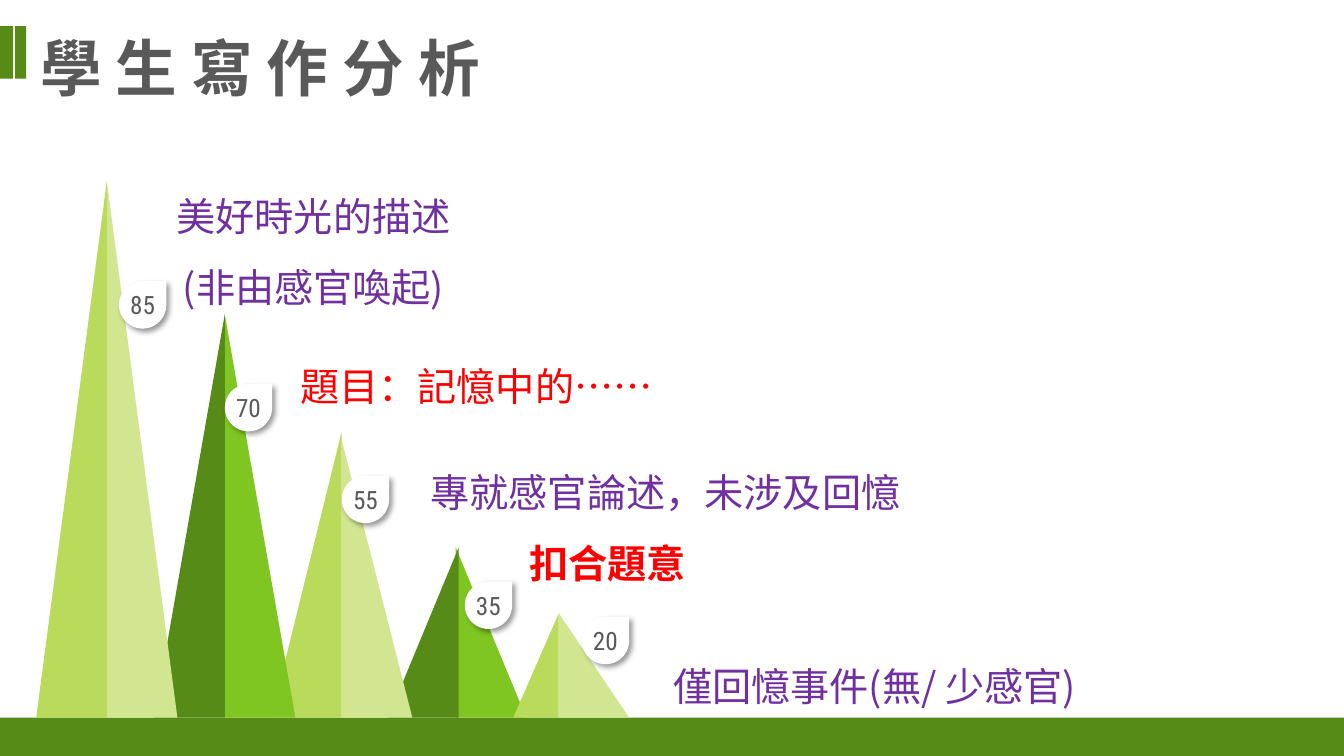
from lxml.etree import SubElement
from pptx import Presentation
from pptx.dml.color import RGBColor
from pptx.enum.shapes import MSO_SHAPE as Shape
from pptx.enum.text import MSO_ANCHOR as Anchor, MSO_AUTO_SIZE as AutoSize, PP_ALIGN as Align
from pptx.oxml.ns import qn
from pptx.util import Inches, Pt

# All places and sizes are counted in cells of a fine square grid.
CELL = Inches(0.01)
COLUMNS, ROWS = 1333, 750
GROUND_TOP = 712
HALF_WIDTH = 70
BADGE_SIZE = 47

CJK, NUMBERS, LATIN = "Noto Sans CJK SC", "Roboto Condensed", "Calibri"
DARK, GREEN, LIME, PALE = "578B18", "7FC622", "BADA5C", "D2E692"
GREY, PURPLE, RED, WHITE = "595959", "7030A0", "FF0000", "FFFFFF"

BARS = [(0, 26, 13, 52), (15, 26, 11, 52)]
GROUND = (-4, GROUND_TOP, COLUMNS + 10, ROWS - GROUND_TOP)

# value, (left apex, top, width), (right apex, top), badge corner, colours
PEAKS = [
    ("35", (455, 543, HALF_WIDTH), (452, 543), (461, 577), (DARK, GREEN)),
    ("55", (339, 428, HALF_WIDTH), (339, 437), (339, 472), (LIME, PALE)),
    ("70", (223, 312, HALF_WIDTH), (223, 312), (223, 381), (DARK, GREEN)),
    ("85", (106, 180, HALF_WIDTH), (106, 180), (118, 279), (LIME, PALE)),
    ("20", (554, 609, 45), (554, 608), (577, 612), (LIME, PALE)),
]

TITLE = dict(size=Pt(44), name=CJK, bold=True, color=GREY)
NOTE = dict(size=Pt(28), name=CJK, color=PURPLE)
TOPIC = dict(size=Pt(28), name=CJK, color=RED)
VERDICT = dict(size=Pt(28), name=LATIN, bold=True, color=RED)
VALUE = dict(size=Pt(18), name=NUMBERS, color=GREY)
PLAIN = dict(alignment=Align.LEFT)
SPACED = dict(alignment=Align.CENTER, line_spacing=1.5)

# box, lines, font, paragraph format, wrap
TEXTS = [
    ((30, 25, 524, 84), ["學 生 寫 作 分 析"], TITLE, PLAIN, True),
    ((133, 163, 356, 143), ["美好時光的描述", "(非由感官喚起)"], NOTE, SPACED, True),
    ((408, 436, 504, 72), ["專就感官論述，未涉及回憶"], NOTE, SPACED, True),
    ((288, 355, 377, 57), ["題目：記憶中的……"], TOPIC, PLAIN, True),
    ((626, 629, 483, 72), ["僅回憶事件(無/ 少感官)"], NOTE, SPACED, True),
    ((515, 530, 177, 57), ["扣合題意"], VERDICT, PLAIN, False),
]


def rgb(color):
    return RGBColor.from_string(color)


def set_all(target, values):
    for name, value in values.items():
        setattr(target, name, value)


def in_cells(box):
    return [length * CELL for length in box]


def add_block(slide, kind, box, color):
    shape = slide.shapes.add_shape(kind, *in_cells(box))
    shape.shadow.inherit = False
    shape.fill.solid()
    shape.fill.fore_color.rgb = rgb(color)
    shape.line.fill.background()
    return shape


def write(frame, lines, font, layout):
    for index, line in enumerate(lines):
        paragraph = frame.add_paragraph() if index else frame.paragraphs[0]
        set_all(paragraph, layout)
        run = paragraph.add_run()
        run.text = line
        set_all(run.font, {key: font[key] for key in font if key != "color"})
        run.font.color.rgb = rgb(font["color"])
        east_asian = SubElement(run.font._element, qn("a:ea"))
        east_asian.set("typeface", CJK)


def add_soft_shadow(shape):
    effects = shape.element.spPr.find(qn("a:effectLst"))
    shadow = SubElement(effects, qn("a:outerShdw"), blurRad=str(Pt(4)), dist=str(Pt(3)),
                        dir=str(45 * 60000), algn="tl", rotWithShape="0")
    color = SubElement(shadow, qn("a:srgbClr"), val="000000")
    SubElement(color, qn("a:alpha"), val="40000")


def add_peak(slide, left_half, right_half, colors):
    """Two right triangles standing back to back on the ground."""
    apex, top, width = left_half
    right_apex, right_top = right_half
    add_block(slide, Shape.RIGHT_TRIANGLE,
              (right_apex, right_top, HALF_WIDTH, GROUND_TOP - right_top), colors[1])
    left = add_block(slide, Shape.RIGHT_TRIANGLE,
                     (apex - width, top, width, GROUND_TOP - top), colors[0])
    left.element.spPr.find(qn("a:xfrm")).set("flipH", "1")


def add_badge(slide, corner, value):
    badge = add_block(slide, Shape.TEAR, (*corner, BADGE_SIZE, BADGE_SIZE), WHITE)
    add_soft_shadow(badge)
    set_all(badge.text_frame, dict(margin_left=0, margin_right=0, margin_top=0,
                                   margin_bottom=0, vertical_anchor=Anchor.MIDDLE))
    write(badge.text_frame, [value], VALUE, dict(alignment=Align.CENTER))


def main():
    presentation = Presentation()
    presentation.slide_width = COLUMNS * CELL
    presentation.slide_height = ROWS * CELL
    slide = presentation.slides.add_slide(presentation.slide_layouts[6])

    for box in [*BARS, GROUND]:
        add_block(slide, Shape.RECTANGLE, box, DARK)
    for _, left_half, right_half, _, colors in PEAKS:
        add_peak(slide, left_half, right_half, colors)
    for value, _, _, corner, _ in PEAKS:
        add_badge(slide, corner, value)
    for box, lines, font, layout, wrap in TEXTS:
        frame = slide.shapes.add_textbox(*in_cells(box)).text_frame
        set_all(frame, dict(word_wrap=wrap, auto_size=AutoSize.SHAPE_TO_FIT_TEXT))
        write(frame, lines, font, layout)

    presentation.save("out.pptx")


if __name__ == "__main__":
    main()
